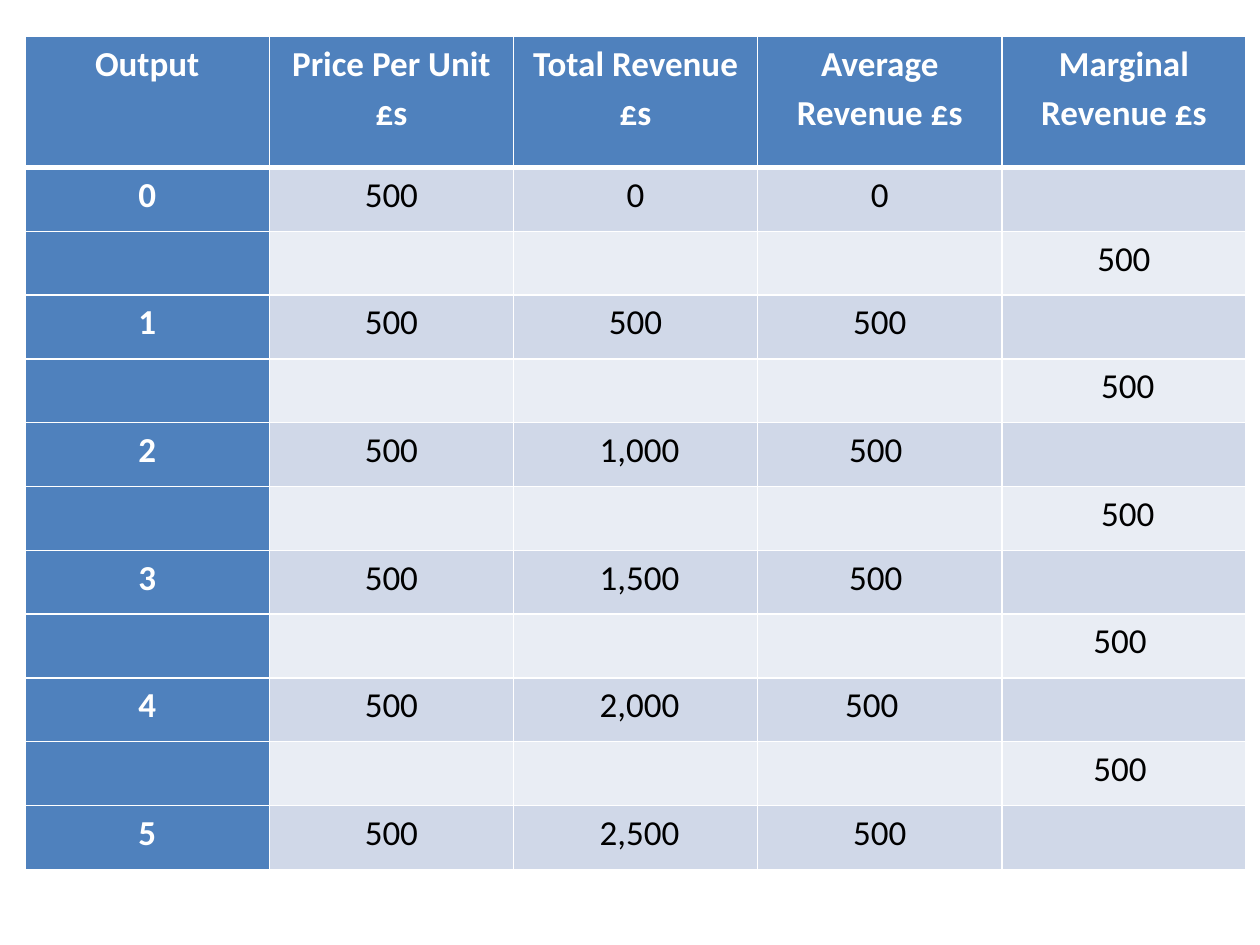
from lxml.etree import SubElement
from pptx import Presentation
from pptx.dml.color import RGBColor
from pptx.enum.text import PP_ALIGN
from pptx.oxml.ns import qn
from pptx.util import Inches, Pt

WHITE = RGBColor(0xFF, 0xFF, 0xFF)
BLACK = RGBColor(0x00, 0x00, 0x00)
BLUE = RGBColor(0x4F, 0x81, 0xBD)
BAND_DARK = RGBColor(0xD0, 0xD8, 0xE8)
BAND_LIGHT = RGBColor(0xE9, 0xED, 0xF4)

HEADINGS = ["Output", "Price Per Unit £s", "Total Revenue £s",
            "Average Revenue £s", "Marginal Revenue £s"]
REVENUE_ROWS = [
    ["0", "500", "0", "0", ""],
    ["", "", "", "", "500"],
    ["1", "500", "500", "500", ""],
    ["", "", "", "", " 500"],
    ["2", "500", " 1,000", "500 ", ""],
    ["", "", "", "", " 500"],
    ["3", "500", " 1,500", "500 ", ""],
    ["", "", "", "", "500 "],
    ["4", "500", " 2,000", "500  ", ""],
    ["", "", "", "", "500 "],
    ["5", "500", " 2,500", " 500 ", ""],
]


def set_borders(cell, top, bottom):
    """Draw white borders of the given top and bottom widths in points."""
    properties = cell._tc.get_or_add_tcPr()
    for side, width in (("L", 1), ("R", 1), ("T", top), ("B", bottom)):
        line = SubElement(properties, qn(f"a:ln{side}"), w=str(Pt(width)))
        fill = SubElement(line, qn("a:solidFill"))
        SubElement(fill, qn("a:srgbClr"), val=str(WHITE))


def write_cell(cell, text, bold, color):
    """Write one centred run of text into a cell."""
    cell.margin_left = cell.margin_right = Inches(0.07)
    cell.margin_top = cell.margin_bottom = 0
    para = cell.text_frame.paragraphs[0]
    para.alignment = PP_ALIGN.CENTER
    para.line_spacing = 1.15
    para.font.size = Pt(20)
    if text:
        span = para.add_run()
        span.text = text
        span.font.name = "Calibri"
        span.font.size = Pt(20)
        span.font.bold = bold
        span.font.color.rgb = color


def add_revenue_table(page, left, top, width, height):
    """Place the revenue table in the given box."""
    rows = [HEADINGS] + REVENUE_ROWS
    table = page.shapes.add_table(
        len(rows), len(HEADINGS), left, top, width, height).table
    table.first_col = True
    for column in table.columns:
        column.width = int(width / len(HEADINGS))
    header_height = Inches(1.04)
    for number, values in enumerate(rows):
        is_header = number == 0
        table.rows[number].height = (
            header_height if is_header
            else int((height - header_height) / len(REVENUE_ROWS)))
        band = BAND_DARK if number % 2 else BAND_LIGHT
        for position, text in enumerate(values):
            cell = table.cell(number, position)
            is_heading = is_header or position == 0
            set_borders(cell, 3 if number == 1 else 1, 3 if is_header else 1)
            cell.fill.solid()
            cell.fill.fore_color.rgb = BLUE if is_heading else band
            write_cell(cell, text, is_heading, WHITE if is_heading else BLACK)


def main():
    """Build and save the deck."""
    deck = Presentation()
    deck.slide_width = Inches(10)
    deck.slide_height = Inches(7.5)
    page = deck.slides.add_slide(deck.slide_layouts[6])
    add_revenue_table(page, Inches(0.2), Inches(0.29),
                      Inches(9.69), Inches(6.61))
    deck.save("out.pptx")


if __name__ == "__main__":
    main()
